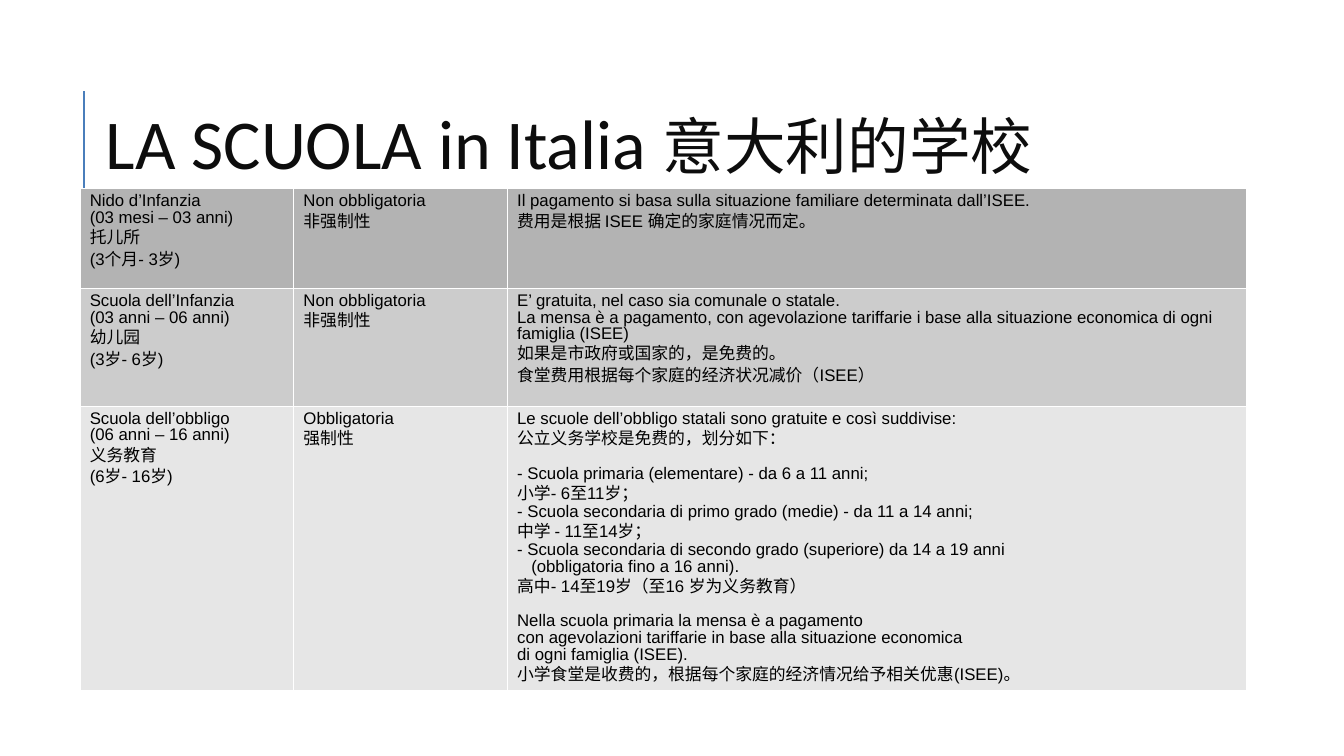
from pptx import Presentation, util as u
from pptx.dml.color import RGBColor
from pptx.enum import shapes, text
from pptx.oxml import parse_xml
from pptx.oxml.ns import nsdecls, qn
from lxml import etree

THEME = dict(
    ink="000000", title="0D0D0D", accent="4A7EBB", border="FFFFFF",
    rows=["B3B3B3", "CCCCCC", "E6E6E6"],
    body_font="Arial", title_font="Calibri", cjk_font="Noto Sans CJK SC",
    body=12, title_size=50, cjk_size=44, rule=1.5, cell_border=0.06,
)
GAP, INDENT = "gap", "indent"

# Each table row: stage, obligation, explanation; a tuple adds a paragraph format.
ROWS = [
    [["Nido d’Infanzia", "(03 mesi – 03 anni)", "托儿所", "(3个月- 3岁)"],
     ["Non obbligatoria", "非强制性"],
     ["Il pagamento si basa sulla situazione familiare determinata dall’ISEE.",
      "费用是根据 ISEE 确定的家庭情况而定。"]],
    [["Scuola dell’Infanzia", "(03 anni – 06 anni)", "幼儿园", "(3岁- 6岁)"],
     ["Non obbligatoria", "非强制性"],
     ["E’ gratuita, nel caso sia comunale o statale.",
      "La mensa è a pagamento, con agevolazione tariffarie i base alla "
      "situazione economica di ogni famiglia (ISEE)",
      "如果是市政府或国家的，是免费的。",
      "食堂费用根据每个家庭的经济状况减价（ISEE）"]],
    [["Scuola dell’obbligo", "(06 anni – 16 anni)", "义务教育", "(6岁- 16岁)"],
     ["Obbligatoria", "强制性"],
     ["Le scuole dell’obbligo statali sono gratuite e così suddivise:",
      "公立义务学校是免费的，划分如下：",
      ("- Scuola primaria (elementare) - da 6 a 11 anni;", GAP),
      "小学- 6至11岁；",
      "- Scuola secondaria di primo grado (medie) - da 11 a 14 anni;",
      "中学 - 11至14岁；",
      "- Scuola secondaria di secondo grado (superiore) da 14 a 19 anni",
      ("(obbligatoria fino a 16 anni).", INDENT),
      "高中- 14至19岁（至16 岁为义务教育）",
      ("Nella scuola primaria la mensa è a pagamento", GAP),
      "con agevolazioni tariffarie in base alla situazione economica",
      "di ogni famiglia (ISEE).",
      "小学食堂是收费的，根据每个家庭的经济情况给予相关优惠(ISEE)。"]],
]

prs = Presentation()
prs.slide_width, prs.slide_height = u.Inches(13.33), u.Inches(7.5)
s = prs.slides.add_slide(prs.slide_layouts[5])


def share(across=0, down=0):
    """Turn percentages of the slide's width and height into lengths."""
    return int(prs.slide_width * across / 100), int(prs.slide_height * down / 100)


def add_run(p, words, size, font, color):
    r = p.add_run()
    r.text = words
    r.font.size, r.font.name = u.Pt(size), font
    r.font.color.rgb = RGBColor.from_string(color)
    return r


# Title
title = s.shapes.title
title.left, title.top = share(7.13, 12.53)
title.width, title.height = share(90.32, 12.4)
tf = title.text_frame
tf.auto_size = text.MSO_AUTO_SIZE.NONE
tf.vertical_anchor = text.MSO_ANCHOR.MIDDLE
p = tf.paragraphs[0]
p.alignment = text.PP_ALIGN.LEFT
add_run(p, "LA SCUOLA in Italia ", THEME["title_size"], THEME["title_font"], THEME["title"])
r = add_run(p, "意大利的学校", THEME["cjk_size"], THEME["cjk_font"], THEME["title"])
etree.SubElement(r.font._element, qn("a:ea"), typeface=THEME["cjk_font"])

# Rule beside the title
rule = s.shapes.add_connector(
    shapes.MSO_CONNECTOR.STRAIGHT, *share(6.23, 25.33), *share(6.23, 12))
rule.line.color.rgb = RGBColor.from_string(THEME["accent"])
rule.line.width = u.Pt(THEME["rule"])
etree.SubElement(rule._element.spPr, qn("a:effectLst"))

# Table of school stages
table = s.shapes.add_table(3, 3, *share(5.93, 24.93), *share(86.8, 65.6)).table
table.first_row = table.horz_banding = False
for col, width in zip(table.columns, (15.9, 15.9, 55)):
    col.width = share(across=width)[0]
for row, height in zip(table.rows, (13.2, 15.6, 36.8)):
    row.height = share(down=height)[1]

for row, stage, shade in zip(table.rows, ROWS, THEME["rows"]):
    for cell, lines in zip(row.cells, stage):
        tcPr = cell._tc.get_or_add_tcPr()
        for side in ("lnL", "lnR", "lnT", "lnB"):
            tcPr.append(parse_xml(
                f'<a:{side} {nsdecls("a")} w="{u.Pt(THEME["cell_border"])}"><a:solidFill>'
                f'<a:srgbClr val="{THEME["border"]}"/></a:solidFill></a:{side}>'))
        cell.fill.solid()
        cell.fill.fore_color.rgb = RGBColor.from_string(shade)
        tf = cell.text_frame
        for i, line in enumerate(lines):
            words, layout = line if isinstance(line, tuple) else (line, None)
            p = tf.add_paragraph() if i else tf.paragraphs[0]
            p.line_spacing = 0.87
            p.space_before = u.Pt(THEME["body"] if layout == GAP else 0.1)
            p.space_after = u.Pt(0.1)
            if layout == INDENT:
                p._p.get_or_add_pPr().set("marL", str(u.Inches(0.14)))
            add_run(p, words, THEME["body"], THEME["body_font"], THEME["ink"])

prs.save("out.pptx")
